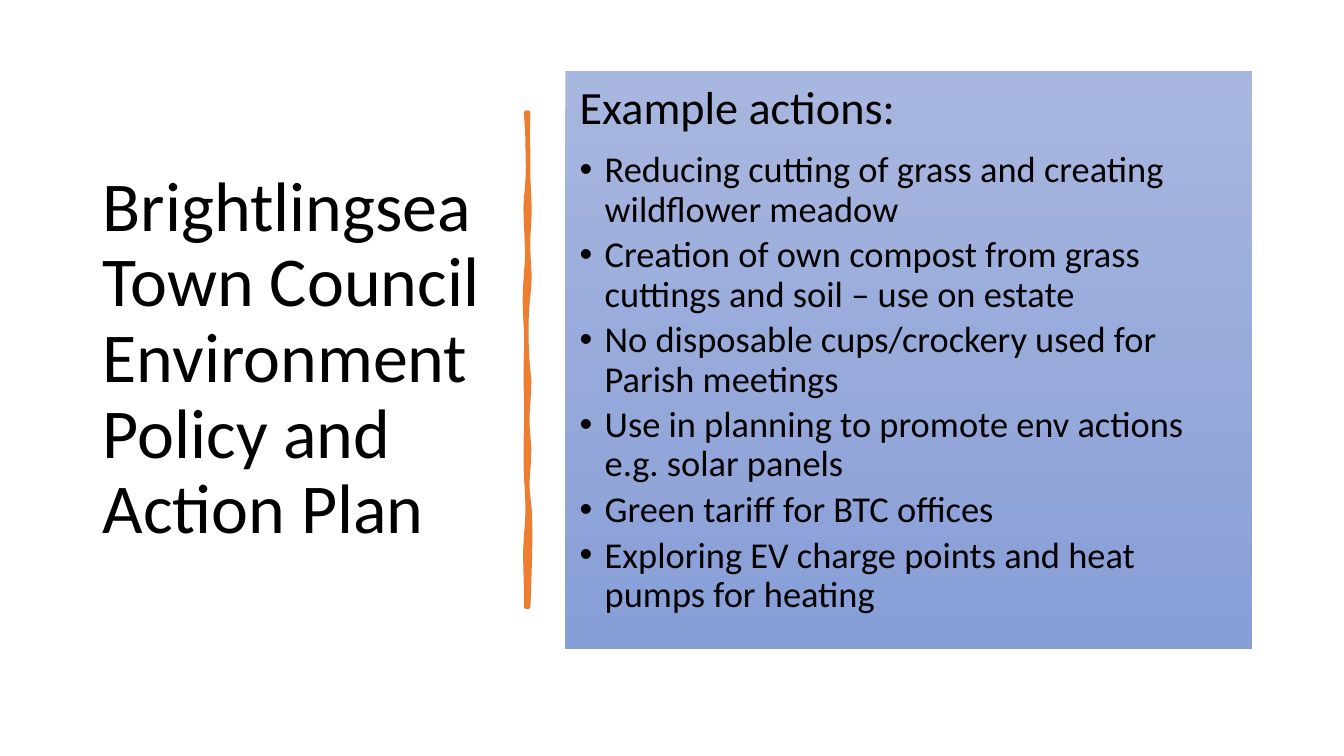
"""Build the slide on the town council's environment policy and its example actions."""
from typing import Any, NamedTuple

from lxml.etree import SubElement
from pptx import Presentation
from pptx.dml.color import RGBColor
from pptx.enum.shapes import MSO_SHAPE as Preset
from pptx.enum.text import MSO_ANCHOR as Anchor, PP_ALIGN as Align
from pptx.oxml.ns import qn
from pptx.util import Cm, Pt


class Box(NamedTuple):
    left: float
    top: float
    width: float
    height: float


class Entry(NamedTuple):
    text: str
    size: float
    space_after: float = 0
    bulleted: bool = False


class Curve(NamedTuple):
    x1: float
    y1: float
    x2: float
    y2: float
    x: float
    y: float


FONT = "Calibri"
INK = "000000"
ACCENT = "ED7D31"
PANEL_TOP, PANEL_BOTTOM = "A8B7DF", "889ED7"
INDENT = 0.63
CURVE_STEPS = 6
UNITS_PER_MM = 100

TITLE_BOX = Box(2.34, 1.52, 10.01, 15.09)
PANEL_BOX = Box(14.25, 1.78, 17.3, 14.58)
TITLE = Entry("Brightlingsea Town Council Environment Policy and Action Plan", 50)
HEADING = Entry("Example actions:", 33, 12)
ACTIONS = (
    "Reducing cutting of grass and creating wildflower meadow",
    "Creation of own compost from grass cuttings and soil – use on estate",
    "No disposable cups/crockery used for Parish meetings",
    "Use in planning to promote env actions e.g. solar panels",
    "Green tariff for BTC offices",
    "Exploring EV charge points and heat pumps for heating",
)

DIVIDER_START = (133.1, 28.4)
RIGHT_EDGE = (
    Curve(132.8, 36.1, 133.1, 37.8, 133.1, 45),
    Curve(133.4, 52.3, 133.6, 52.6, 133.1, 59.2),
    Curve(132.8, 65.8, 133.9, 68.3, 133.1, 74.4),
    Curve(132.3, 80.5, 132.6, 88.9, 133.1, 93.5),
    Curve(133.9, 98, 132.3, 104.1, 133.1, 110),
    Curve(133.9, 115.8, 132.3, 120.9, 133.1, 125.2),
    Curve(133.9, 129.8, 133.6, 140, 133.1, 152.9),
)
BOTTOM_END = (Curve(132.8, 152.9, 132.8, 152.9, 132.6, 152.9),)
LEFT_EDGE = (
    Curve(132.8, 148.3, 132.1, 140.5, 132.6, 135.1),
    Curve(133.1, 130, 133.1, 127, 132.6, 119.9),
    Curve(132.3, 112.8, 132.8, 107.2, 132.6, 99.6),
    Curve(132.3, 92.2, 132.8, 88.1, 132.6, 83.1),
    Curve(132.3, 78, 132.1, 75.4, 132.6, 69.1),
    Curve(133.4, 62.7, 132.1, 53.8, 132.6, 50),
    Curve(133.1, 46.2, 133.4, 38.6, 132.6, 28.4),
)


def rgb(code: str) -> RGBColor:
    return RGBColor.from_string(code)


def apply_format(target: Any, values: dict[str, Any]) -> None:
    for attribute, value in values.items():
        setattr(target, attribute, value)


def place(box: Box) -> list[Cm]:
    return [Cm(length) for length in box]


def write_entries(frame: Any, entries: list[Entry], inset: dict[str, Any]) -> None:
    apply_format(frame, {"word_wrap": True, **inset})
    for position, entry in enumerate(entries):
        paragraph = frame.add_paragraph() if position else frame.paragraphs[0]
        apply_format(paragraph, {"text": entry.text, "alignment": Align.LEFT,
                                 "line_spacing": 0.9, "space_after": Pt(entry.space_after)})
        apply_format(paragraph.runs[0].font, {"name": FONT, "size": Pt(entry.size)})
        paragraph.runs[0].font.color.rgb = rgb(INK)
        if entry.bulleted:
            properties = paragraph._p.get_or_add_pPr()
            properties.set("marL", str(Cm(INDENT)))
            properties.set("indent", str(-Cm(INDENT)))
            SubElement(properties, qn("a:buFont")).set("typeface", "Arial")
            SubElement(properties, qn("a:buChar")).set("char", "•")


def trace(start: tuple[float, float], curves: tuple[Curve, ...]) -> list[tuple[float, float]]:
    points = [start]
    for curve in curves:
        x0, y0 = points[-1]
        for step in range(1, CURVE_STEPS + 1):
            t = step / CURVE_STEPS
            a, b, c, d = (1 - t) ** 3, 3 * t * (1 - t) ** 2, 3 * t * t * (1 - t), t ** 3
            points.append((a * x0 + b * curve.x1 + c * curve.x2 + d * curve.x,
                           a * y0 + b * curve.y1 + c * curve.y2 + d * curve.y))
    return points


def draw_divider(shapes: Any) -> None:
    outline = [(x * UNITS_PER_MM, y * UNITS_PER_MM)
               for x, y in trace(DIVIDER_START, RIGHT_EDGE + BOTTOM_END + LEFT_EDGE)]
    builder = shapes.build_freeform(*outline[0], scale=Cm(0.1) / UNITS_PER_MM)
    builder.add_line_segments(outline[1:], close=True)
    divider = builder.convert_to_shape()
    divider.shadow.inherit = False
    for paint in (divider.fill, divider.line.fill):
        paint.solid()
        paint.fore_color.rgb = rgb(ACCENT)
    divider.line.width = Pt(3.25)


def draw_panel(shapes: Any) -> None:
    panel = shapes.add_shape(Preset.RECTANGLE, *place(PANEL_BOX))
    panel.shadow.inherit = False
    panel.line.fill.background()
    panel.fill.gradient()
    panel.fill.gradient_angle = 270
    for stop, code in zip(panel.fill.gradient_stops, (PANEL_TOP, PANEL_BOTTOM)):
        stop.color.rgb = rgb(code)
    sides = ("left", "top", "right", "bottom")
    inset = {f"margin_{side}": Cm(0.36) for side in sides}
    entries = [HEADING, *(Entry(action, 26, 4.5, True) for action in ACTIONS)]
    write_entries(panel.text_frame, entries, {"vertical_anchor": Anchor.TOP, **inset})


def main() -> None:
    deck = Presentation()
    apply_format(deck, {"slide_width": Cm(33.87), "slide_height": Cm(19.05)})
    shapes = deck.slides.add_slide(deck.slide_layouts[6]).shapes
    title = shapes.add_textbox(*place(TITLE_BOX))
    write_entries(title.text_frame, [TITLE], {"vertical_anchor": Anchor.MIDDLE})
    draw_divider(shapes)
    draw_panel(shapes)
    deck.save("out.pptx")


if __name__ == "__main__":
    main()
